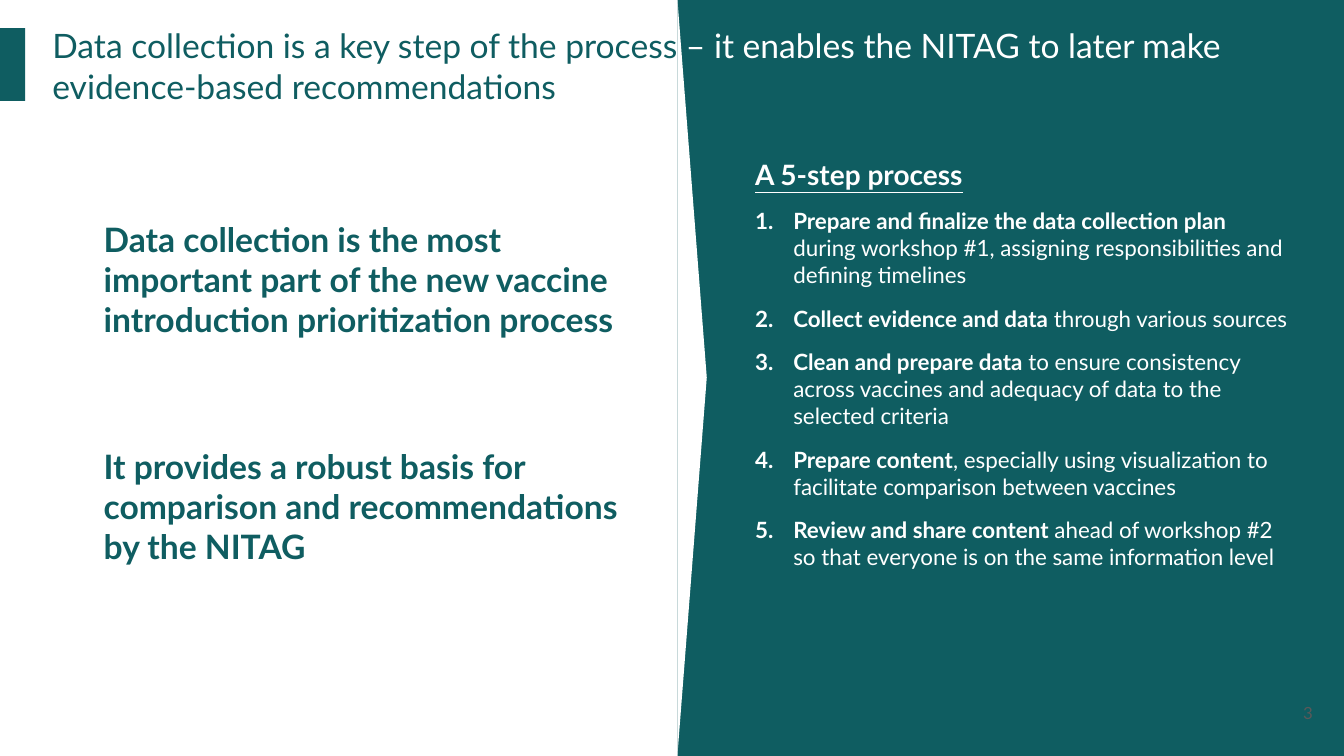
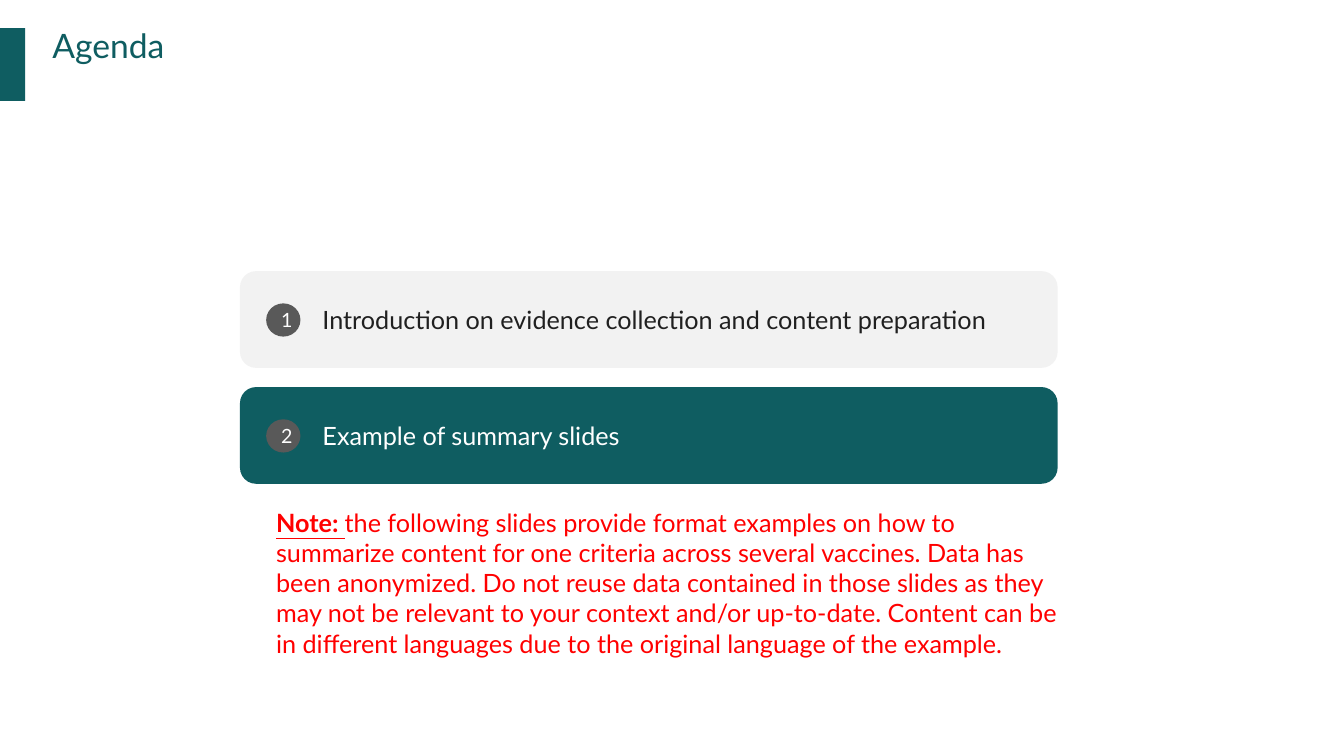
from lxml import etree
from pptx import Presentation
from pptx.dml.color import RGBColor
from pptx.enum import shapes, text
from pptx.oxml import ns
from pptx.util import Inches, Pt

TEAL = RGBColor(0x0F, 0x5D, 0x61)
WHITE = RGBColor(0xFF, 0xFF, 0xFF)
LIGHT_GREY = RGBColor(0xF2, 0xF2, 0xF2)
DARK_GREY = RGBColor(0x59, 0x59, 0x59)
INK = RGBColor(0x20, 0x20, 0x20)
RED = RGBColor(0xFF, 0x00, 0x00)

FONT = "Lato"
TITLE_SIZE = 24
SLIDE_WIDTH, SLIDE_HEIGHT = 13.33, 7.5
PANEL_LEFT = 6.72

STEPS = [
    ("Prepare and finalize the data collection plan",
     " during workshop #1, assigning responsibilities and defining timelines"),
    ("Collect evidence and data", " through various sources"),
    ("Clean and prepare data",
     " to ensure consistency across vaccines and adequacy of data to the selected criteria"),
    ("Prepare content",
     ", especially using visualization to facilitate comparison between vaccines"),
    ("Review and share content",
     " ahead of workshop #2 so that everyone is on the same information level"),
]

KEY_MESSAGES = [
    "Data collection is the most important part of the new vaccine "
    "introduction prioritization process",
    "It provides a robust basis for comparison and recommendations by the NITAG",
]

# Label, card fill, label colour
AGENDA = [
    ("Introduction on evidence collection and content preparation", LIGHT_GREY, INK),
    ("Example of summary slides", TEAL, WHITE),
]


def add_run(paragraph, words, size, color, bold=False, underline=False):
    run = paragraph.add_run()
    run.text = words
    font = run.font
    font.name, font.size, font.bold, font.underline = FONT, Pt(size), bold, underline
    font.color.rgb = color


def add_text(slide, left, top, width, height, margin=None):
    """Add a wrapping text box and return its text frame."""
    frame = slide.shapes.add_textbox(
        Inches(left), Inches(top), Inches(width), Inches(height)).text_frame
    frame.word_wrap = True
    if margin is not None:
        frame.margin_left = frame.margin_right = Inches(margin)
        frame.margin_top = frame.margin_bottom = Inches(margin)
    return frame


def add_block(slide, preset, left, top, width, height, fill):
    """Add a plain filled shape without outline or shadow."""
    block = slide.shapes.add_shape(
        preset, Inches(left), Inches(top), Inches(width), Inches(height))
    block.shadow.inherit = False
    block.fill.solid()
    block.fill.fore_color.rgb = fill
    block.line.fill.background()
    return block


def add_title(slide, *parts):
    """Add the side band and a title made of (words, colour) parts."""
    add_block(slide, shapes.MSO_SHAPE.RECTANGLE, 0, 0.28, 0.25, 0.72, TEAL)
    title = add_text(slide, 0.52, 0.25, 12.3, 0.8, margin=0).paragraphs[0]
    for words, color in parts:
        add_run(title, words, TITLE_SIZE, color)


def number_paragraph(paragraph, indent):
    properties = paragraph._p.get_or_add_pPr()
    properties.set("marL", str(Inches(indent)))
    properties.set("indent", str(-Inches(indent)))
    numbering = etree.SubElement(properties, ns.qn("a:buAutoNum"))
    numbering.set("type", "arabicPeriod")


def add_side_panel(slide):
    """Add the teal panel with a white notch pointing into it."""
    add_block(slide, shapes.MSO_SHAPE.RECTANGLE, PANEL_LEFT, 0,
              SLIDE_WIDTH - PANEL_LEFT, SLIDE_HEIGHT, TEAL)
    depth, length = 0.29, 7.47
    notch = add_block(slide, shapes.MSO_SHAPE.ISOSCELES_TRIANGLE,
                      PANEL_LEFT + (depth - length) / 2, 3.6, length, depth, WHITE)
    notch.rotation = 90


def add_steps(slide):
    frame = add_text(slide, 7.39, 1.51, 5.51, 0.8)
    add_run(frame.paragraphs[0], "A 5-step process", 20, WHITE, bold=True, underline=True)
    for action, detail in STEPS:
        step = frame.add_paragraph()
        number_paragraph(step, 0.38)
        step.space_before = Pt(12)
        add_run(step, action, 16, WHITE, bold=True)
        add_run(step, detail, 16, WHITE)


def add_agenda_item(slide, number, label, fill, color):
    top = 2.69 + (number - 1) * 1.15
    add_block(slide, shapes.MSO_SHAPE.ROUNDED_RECTANGLE, 2.38, top, 8.11, 0.96, fill)
    badge = add_block(slide, shapes.MSO_SHAPE.OVAL, 2.64, top + 0.32, 0.34, 0.33, DARK_GREY)
    badge.text_frame.vertical_anchor = text.MSO_ANCHOR.MIDDLE
    digit = badge.text_frame.paragraphs[0]
    digit.alignment = text.PP_ALIGN.CENTER
    add_run(digit, str(number), 14, WHITE)
    caption = add_text(slide, 3.1, top + 0.28, 7.39, 0.4)
    add_run(caption.paragraphs[0], label, 18, color)


def add_page_number(slide, number):
    page = add_text(slide, 12.5, 6.97, 0.52, 0.25, margin=0).paragraphs[0]
    page.alignment = text.PP_ALIGN.RIGHT
    add_run(page, str(number), 12, DARK_GREY)


def build_process_slide(slide):
    add_side_panel(slide)
    add_title(slide,
              ("Data collection is a key step of the process ", TEAL),
              ("– it enables the NITAG to later make ", WHITE),
              ("evidence-based recommendations", TEAL))
    add_steps(slide)
    for row, message in enumerate(KEY_MESSAGES):
        frame = add_text(slide, 0.93, 2.12 + row * 2.25, 5.51, 0.8)
        add_run(frame.paragraphs[0], message, 24, TEAL, bold=True)
    add_page_number(slide, 3)


def build_agenda_slide(slide):
    add_title(slide, ("Agenda", TEAL))
    for number, item in enumerate(AGENDA, start=1):
        add_agenda_item(slide, number, *item)
    note = add_text(slide, 2.64, 4.98, 7.95, 1.62).paragraphs[0]
    add_run(note, "Note: ", 18, RED, bold=True, underline=True)
    add_run(note,
            "the following slides provide format examples on how to summarize content "
            "for one criteria across several vaccines. Data has been anonymized. Do not "
            "reuse data contained in those slides as they may not be relevant to your "
            "context and/or up-to-date. Content can be in different languages due to the "
            "original language of the example.", 18, RED)


def main():
    deck = Presentation()
    deck.slide_width, deck.slide_height = Inches(SLIDE_WIDTH), Inches(SLIDE_HEIGHT)
    blank = deck.slide_layouts[6]
    for build in (build_process_slide, build_agenda_slide):
        build(deck.slides.add_slide(blank))
    deck.save("out.pptx")


if __name__ == "__main__":
    main()
